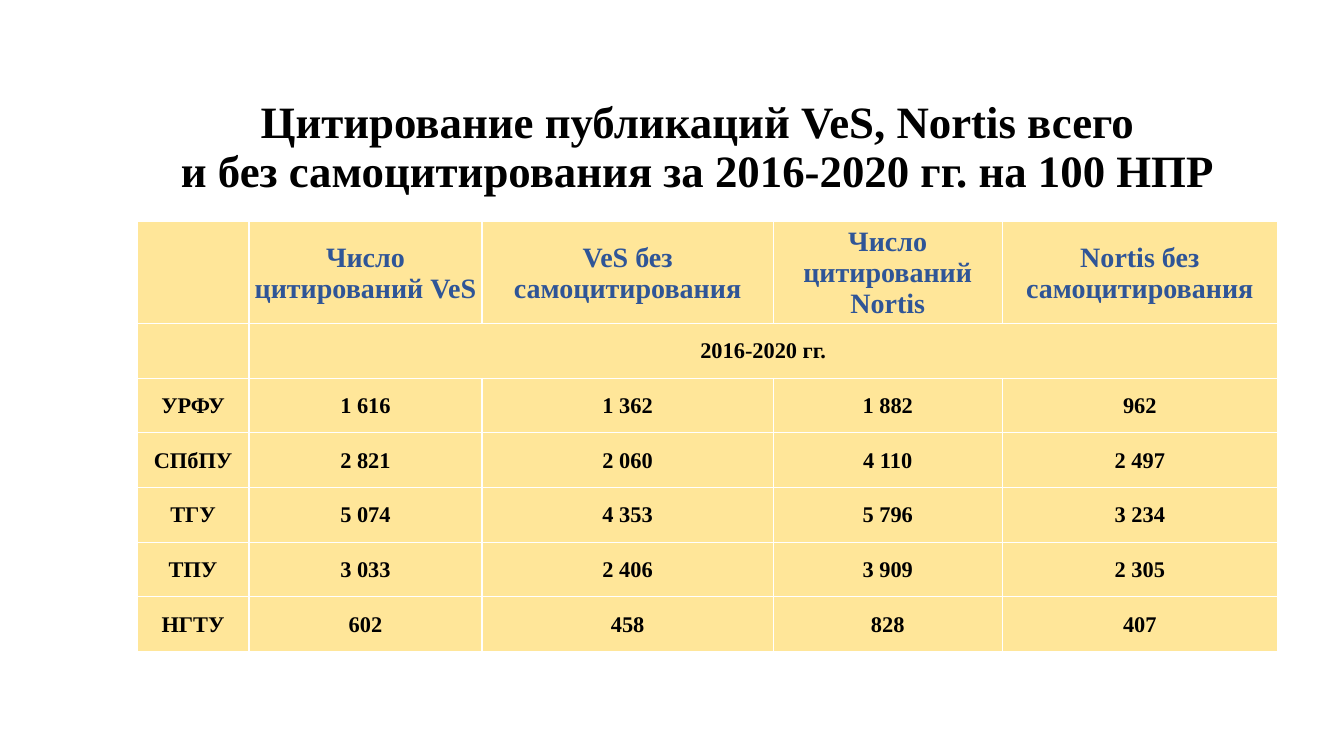
"""Builds a slide with a table of citations per 100 academic staff."""
from dataclasses import dataclass

from lxml.etree import SubElement
from pptx import Presentation
from pptx.dml.color import RGBColor
from pptx.enum.text import MSO_ANCHOR as Anchor, PP_ALIGN as Align
from pptx.oxml.ns import qn
from pptx.slide import Slide
from pptx.table import _Cell as Cell
from pptx.text.text import TextFrame
from pptx.util import Inches, Pt

WIDTH, HEIGHT = Inches(13.33), Inches(7.5)
BLACK = RGBColor(0x00, 0x00, 0x00)
BLUE = RGBColor(0x2F, 0x55, 0x97)
SAND = RGBColor(0xFF, 0xE6, 0x99)
WHITE = RGBColor(0xFF, 0xFF, 0xFF)
FONT = "Times New Roman"


@dataclass(frozen=True)
class Style:
    size: int
    color: RGBColor


@dataclass(frozen=True)
class Row:
    cells: tuple[str, ...]
    share: float = 7.23
    style: Style = Style(16, BLACK)


TITLE = "Цитирование публикаций VeS, Nortis всего\vи без самоцитирования за 2016-2020 гг. на 100 НПР"
TITLE_STYLE = Style(32, BLACK)
COLUMN_SHARES = (8.33, 17.33, 21.68, 17.03, 20.48)
PERIOD_ROW = 1
ROWS = (
    Row(("", "Число цитирований VeS", "VeS без самоцитирования",
         "Число цитирований Nortis", "Nortis без самоцитирования"), 13.07, Style(20, BLUE)),
    Row(("", "2016-2020 гг.", "", "", "")),
    Row(("УРФУ", "1 616", "1 362", "1 882", "962")),
    Row(("СПбПУ", "2 821", "2 060", "4 110", "2 497")),
    Row(("ТГУ", "5 074", "4 353", "5 796", "3 234")),
    Row(("ТПУ", "3 033", "2 406", "3 909", "2 305")),
    Row(("НГТУ", "602", "458", "828", "407")),
)


def across(share: float) -> int:
    """Turn a percentage of the slide width into a length."""
    return round(WIDTH * share / 100)


def down(share: float) -> int:
    """Turn a percentage of the slide height into a length."""
    return round(HEIGHT * share / 100)


def write(frame: TextFrame, text: str, style: Style) -> None:
    """Fill a text frame with one centred bold paragraph."""
    para = frame.paragraphs[0]
    para.text = text
    para.alignment = Align.CENTER
    para.font.name = FONT
    para.font.size = Pt(style.size)
    para.font.bold = True
    para.font.color.rgb = style.color


def draw_title(slide: Slide) -> None:
    """Draw the two-line heading."""
    box = slide.shapes.add_textbox(across(8.78), down(10), across(86.27), down(19.33))
    frame = box.text_frame
    frame.word_wrap = True
    frame.vertical_anchor = Anchor.MIDDLE
    write(frame, TITLE, TITLE_STYLE)
    frame.paragraphs[0].line_spacing = 0.9


def dress(cell: Cell) -> None:
    """Give a cell its margins, white borders and fill."""
    cell.vertical_anchor = Anchor.MIDDLE
    cell.margin_left = cell.margin_right = cell.margin_top = Inches(0.01)
    cell.margin_bottom = 0
    properties = cell._tc.get_or_add_tcPr()
    for side in ("lnL", "lnR", "lnT", "lnB"):
        line = SubElement(properties, qn(f"a:{side}"), w=str(Pt(1)))
        SubElement(SubElement(line, qn("a:solidFill")), qn("a:srgbClr"), val=str(WHITE))
    cell.fill.solid()
    cell.fill.fore_color.rgb = SAND


def draw_table(slide: Slide) -> None:
    """Draw the citation table."""
    table = slide.shapes.add_table(
        len(ROWS), len(COLUMN_SHARES), across(10.2), down(29.33),
        across(sum(COLUMN_SHARES)), down(sum(row.share for row in ROWS))).table
    table.first_row = table.horz_banding = False
    for column, share in zip(table.columns, COLUMN_SHARES):
        column.width = across(share)
    for table_row, row in zip(table.rows, ROWS):
        table_row.height = down(row.share)
        for cell, text in zip(table_row.cells, row.cells):
            dress(cell)
            write(cell.text_frame, text, row.style)
    table.cell(PERIOD_ROW, 1).merge(table.cell(PERIOD_ROW, len(COLUMN_SHARES) - 1))


def main() -> None:
    """Build and save the deck."""
    deck = Presentation()
    deck.slide_width, deck.slide_height = WIDTH, HEIGHT
    page = deck.slides.add_slide(deck.slide_layouts[6])
    draw_title(page)
    draw_table(page)
    deck.save("out.pptx")


if __name__ == "__main__":
    main()
